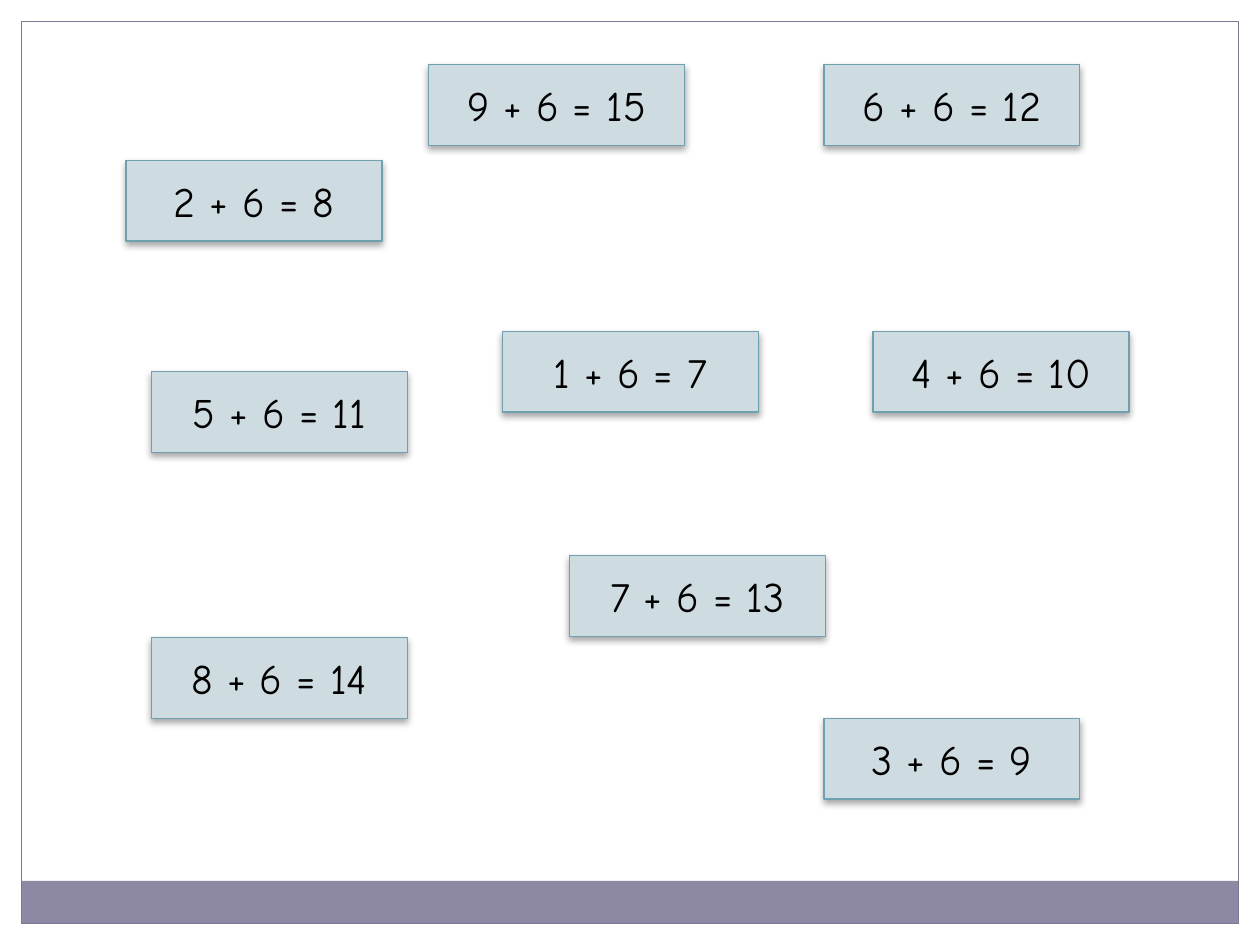
from dataclasses import dataclass

from lxml import etree
from pptx import Presentation
from pptx.dml.color import RGBColor
from pptx.enum.shapes import MSO_SHAPE
from pptx.enum.text import MSO_ANCHOR, PP_ALIGN
from pptx.oxml.ns import qn
from pptx.util import Cm, Pt

RECTANGLE = MSO_SHAPE.RECTANGLE
MIDDLE = MSO_ANCHOR.MIDDLE
CENTER = PP_ALIGN.CENTER


@dataclass(frozen=True)
class Theme:
    font: str = "Comic Neue"
    size: float = 24
    line_width: float = 0.75
    text: str = "000000"
    card_fill: str = "CEDBE0"
    card_line: str = "6EA0B0"
    band: str = "8D89A4"
    frame: str = "7C7991"
    shadow: str = "000000"


@dataclass(frozen=True)
class Card:
    """An addition card: its first addend and its top-left corner in cm."""
    addend: int
    left: float
    top: float


THEME = Theme()
ADDED = 6
CARD_WIDTH, CARD_HEIGHT = 5.16, 1.63
SLIDE_WIDTH, SLIDE_HEIGHT = 25.4, 19.05
MARGIN = 0.43
BAND_HEIGHT = 0.86

CARDS = [
    Card(2, 2.54, 3.23),
    Card(9, 8.64, 1.3),
    Card(5, 3.05, 7.49),
    Card(1, 10.13, 6.68),
    Card(7, 11.48, 11.2),
    Card(3, 16.61, 14.48),
    Card(8, 3.05, 12.85),
    Card(4, 17.6, 6.68),
    Card(6, 16.61, 1.3),
]


def add_box(slide, left: float, top: float, width: float, height: float,
            fill: str | None = None, line: str | None = None):
    s = slide.shapes.add_shape(RECTANGLE, Cm(left), Cm(top), Cm(width), Cm(height))
    if fill:
        s.fill.solid()
        s.fill.fore_color.rgb = RGBColor.from_string(fill)
    else:
        s.fill.background()
    if line:
        s.line.color.rgb = RGBColor.from_string(line)
        s.line.width = Pt(THEME.line_width)
    else:
        s.line.fill.background()
    s.shadow.inherit = False
    return s


def add_shadow(s) -> None:
    """Put a soft shadow straight below a shape."""
    effects = s._element.spPr.find(qn("a:effectLst"))
    shadow = etree.SubElement(effects, qn("a:outerShdw"), blurRad=str(Pt(4)),
                              dist=str(Pt(2)), dir="5400000", rotWithShape="0")
    color = etree.SubElement(shadow, qn("a:srgbClr"), val=THEME.shadow)
    etree.SubElement(color, qn("a:alpha"), val="35000")


def add_card(slide, card: Card) -> None:
    s = add_box(slide, card.left, card.top, CARD_WIDTH, CARD_HEIGHT,
                THEME.card_fill, THEME.card_line)
    add_shadow(s)
    tf = s.text_frame
    tf.text = f"{card.addend} + {ADDED} = {card.addend + ADDED}"
    tf.vertical_anchor = MIDDLE
    p = tf.paragraphs[0]
    p.alignment = CENTER
    font = p.runs[0].font
    font.name = THEME.font
    font.size = Pt(THEME.size)
    font.color.rgb = RGBColor.from_string(THEME.text)


def add_border(slide) -> None:
    width = SLIDE_WIDTH - 2 * MARGIN
    height = SLIDE_HEIGHT - 2 * MARGIN
    band_top = SLIDE_HEIGHT - MARGIN - BAND_HEIGHT
    add_box(slide, MARGIN, band_top, width, BAND_HEIGHT, fill=THEME.band)
    add_box(slide, MARGIN, MARGIN, width, height, line=THEME.frame)


def main() -> None:
    prs = Presentation()
    prs.slide_width, prs.slide_height = Cm(SLIDE_WIDTH), Cm(SLIDE_HEIGHT)
    slide = prs.slides.add_slide(prs.slide_layouts[6])
    add_border(slide)
    for card in CARDS:
        add_card(slide, card)
    prs.save("out.pptx")


if __name__ == "__main__":
    main()
